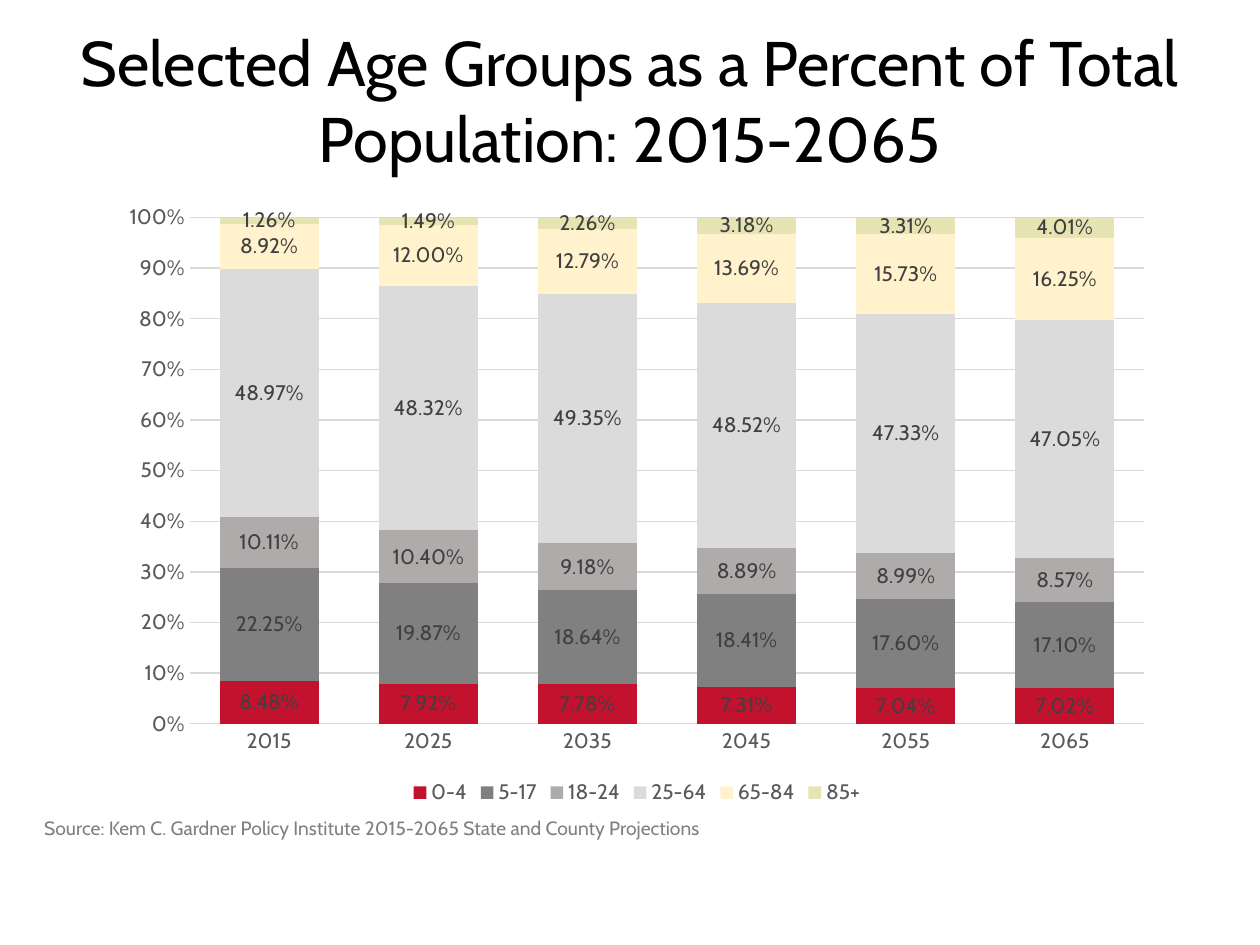
import pptx
import pptx.chart.data
import pptx.dml.color
import pptx.enum.chart
import pptx.enum.text
import pptx.util
from pptx.util import Inches

AGE_GROUPS = {
    "0-4": ("C3122E", (0.0848, 0.0792, 0.0778, 0.0731, 0.0704, 0.0702)),
    "5-17": ("808080", (0.2225, 0.1987, 0.1864, 0.1841, 0.1760, 0.1710)),
    "18-24": ("AFABAB", (0.1011, 0.1040, 0.0918, 0.0889, 0.0899, 0.0857)),
    "25-64": ("DBDBDB", (0.4897, 0.4832, 0.4935, 0.4852, 0.4733, 0.4705)),
    "65-84": ("FFF2CC", (0.0892, 0.1200, 0.1279, 0.1369, 0.1573, 0.1625)),
    "85+": ("E6E4B2", (0.0126, 0.0149, 0.0226, 0.0318, 0.0331, 0.0401)),
}
YEARS = [str(year) for year in range(2015, 2066, 10)]


def rgb(value):
    return pptx.dml.color.RGBColor.from_string(value)


class SlideBuilder:
    font_name = "Cabin"
    chart_size = 12
    axis_text = "595959"
    label_text = "404040"
    grid = "D9D9D9"

    def __init__(self, s):
        self.s = s

    def style_font(self, font, size, color):
        font.name = self.font_name
        font.size = pptx.util.Pt(size)
        font.color.rgb = rgb(color)

    def style_line(self, line):
        line.color.rgb = rgb(self.grid)
        line.width = pptx.util.Pt(0.75)

    def text(self, x, y, w, h, text, size, color, wrap=True):
        sp = self.s.shapes.add_textbox(Inches(x), Inches(y), Inches(w), Inches(h))
        tf = sp.text_frame
        tf.word_wrap = wrap
        tf.auto_size = pptx.enum.text.MSO_AUTO_SIZE.SHAPE_TO_FIT_TEXT
        p = tf.paragraphs[0]
        p.alignment = pptx.enum.text.PP_ALIGN.CENTER
        r = p.add_run()
        r.text = text
        self.style_font(r.font, size, color)

    def stacked_chart(self, x, y, w, h, categories, groups):
        data = pptx.chart.data.CategoryChartData(number_format="0.00%")
        data.categories = categories
        for name, (_, values) in groups.items():
            data.add_series(name, values)
        chart = self.s.shapes.add_chart(
            pptx.enum.chart.XL_CHART_TYPE.COLUMN_STACKED_100,
            Inches(x), Inches(y), Inches(w), Inches(h), data).chart
        self.style_font(chart.font, self.chart_size, "000000")
        chart.has_title = False

        plot = chart.plots[0]
        plot.gap_width = 61
        plot.overlap = 100
        plot.vary_by_categories = False
        for series, (color, _) in zip(plot.series, groups.values()):
            series.format.fill.solid()
            series.format.fill.fore_color.rgb = rgb(color)
            labels = series.data_labels
            labels.show_value = True
            labels.number_format = "0.00%"
            labels.number_format_is_linked = False
            self.style_font(labels.font, self.chart_size, self.label_text)

        for axis in (chart.category_axis, chart.value_axis):
            axis.major_tick_mark = pptx.enum.chart.XL_TICK_MARK.NONE
            axis.minor_tick_mark = pptx.enum.chart.XL_TICK_MARK.NONE
            self.style_font(axis.tick_labels.font, self.chart_size, self.axis_text)
        self.style_line(chart.category_axis.format.line)
        chart.value_axis.format.line.fill.background()
        chart.value_axis.has_major_gridlines = True
        self.style_line(chart.value_axis.major_gridlines.format.line)
        chart.value_axis.maximum_scale = 1
        chart.value_axis.major_unit = 0.1
        chart.value_axis.tick_labels.number_format = "0%"
        chart.value_axis.tick_labels.number_format_is_linked = False

        chart.has_legend = True
        chart.legend.position = pptx.enum.chart.XL_LEGEND_POSITION.BOTTOM
        chart.legend.include_in_layout = False
        self.style_font(chart.legend.font, self.chart_size, self.axis_text)


def main():
    prs = pptx.Presentation()
    prs.slide_width, prs.slide_height = Inches(10), Inches(7.5)
    builder = SlideBuilder(prs.slides.add_slide(prs.slide_layouts[6]))
    builder.text(0.3, 0.14, 9.39, 1.31,
                 "Selected Age Groups as a Percent of Total Population: 2015-2065",
                 36, "000000")
    builder.text(0.08, 6.43, 5.75, 0.29,
                 "Source: Kem C. Gardner Policy Institute 2015-2065 "
                 "State and County Projections",
                 11, "808080", wrap=False)
    builder.stacked_chart(0.86, 1.53, 8.39, 4.9, YEARS, AGE_GROUPS)
    prs.save("out.pptx")


if __name__ == "__main__":
    main()
